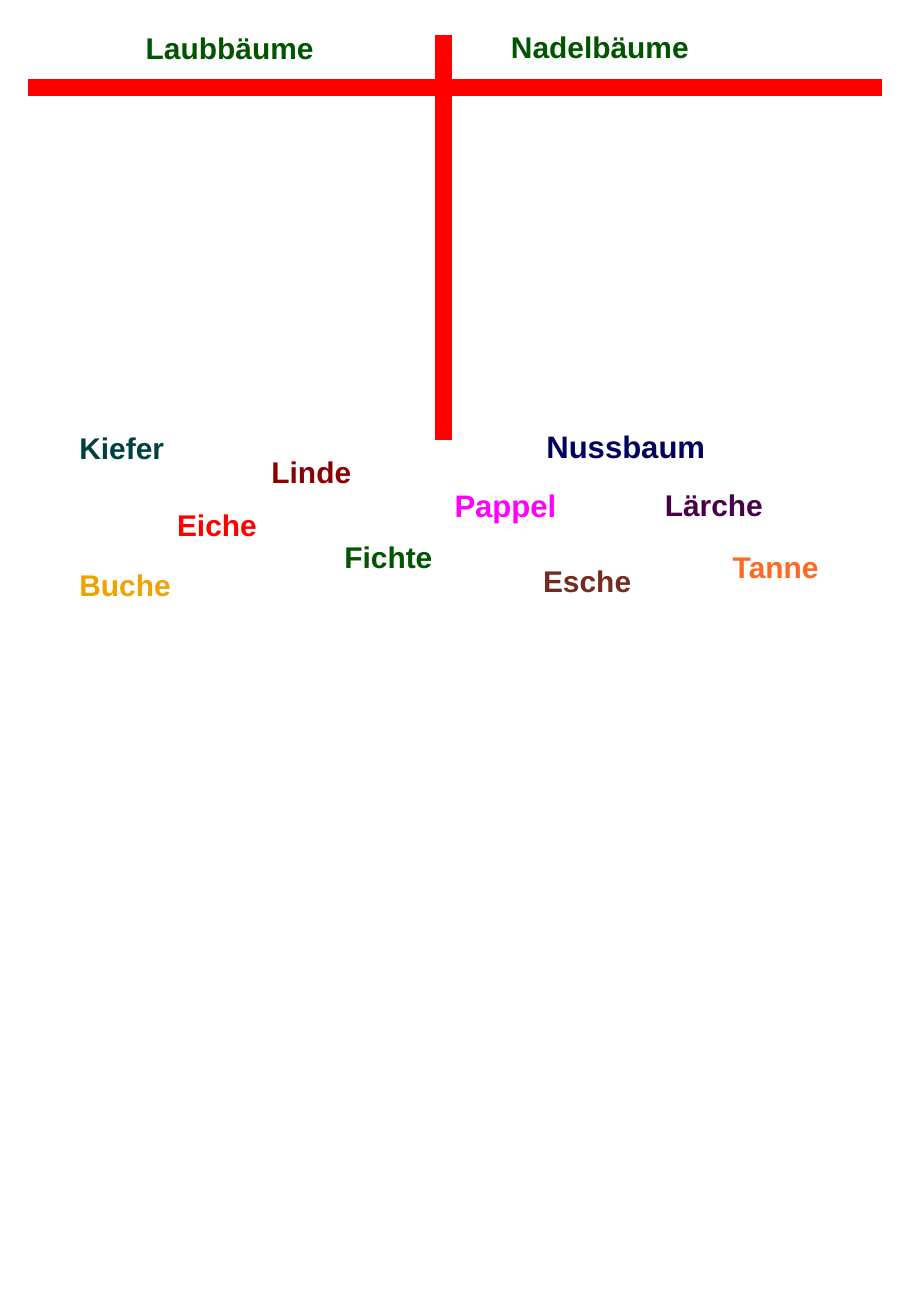
"""Build a German worksheet for sorting tree names into broadleaf and conifer columns."""
from dataclasses import dataclass

from lxml.etree import SubElement
from pptx import Presentation
from pptx.dml.color import RGBColor
from pptx.enum.shapes import MSO_CONNECTOR as Connector
from pptx.enum.text import MSO_ANCHOR as Anchor, MSO_AUTO_SIZE as AutoSize, PP_ALIGN as Align
from pptx.oxml.ns import qn
from pptx.util import Pt

PX = 9144


@dataclass(frozen=True)
class Theme:
    font: str = "Arial"
    normal: int = 26
    large: int = 27
    rule_width: int = 15
    red: str = "FF0000"
    green: str = "005500"
    teal: str = "004040"
    plum: str = "480048"
    orange: str = "FF6820"
    dark_red: str = "8B0000"
    gold: str = "EFA303"
    brown: str = "742C21"
    navy: str = "00005E"
    magenta: str = "FF00FF"


theme = Theme()


def write_word(shape, word, size, color):
    """Put one bold word at the top left of a shape."""
    frame = shape.text_frame
    frame.word_wrap = True
    frame.auto_size = AutoSize.SHAPE_TO_FIT_TEXT
    frame.vertical_anchor = Anchor.TOP
    paragraph = frame.paragraphs[0]
    paragraph.alignment = Align.LEFT
    paragraph.space_before = Pt(0)
    run = paragraph.add_run()
    run.text = word
    run.font.name = theme.font
    run.font.size = Pt(size)
    run.font.bold = True
    run.font.color.rgb = RGBColor.from_string(color)


presentation = Presentation()
presentation.slide_width = 1111 * PX
presentation.slide_height = 1589 * PX
comparison_layout = presentation.slide_layouts.get_by_name("Comparison")
slide = presentation.slides.add_slide(comparison_layout)

table_rules = [(34, 106, 1065, 106), (536, 42, 536, 531)]
for ends in table_rules:
    rule = slide.shapes.add_connector(Connector.STRAIGHT, *(end * PX for end in ends))
    rule.line.color.rgb = RGBColor.from_string(theme.red)
    rule.line.width = Pt(theme.rule_width)
    SubElement(rule.element.spPr, qn("a:effectLst"))

headings = {
    1: ("Laubbäume", 166, 31, 341),
    3: ("Nadelbäume", 607, 29, 360),
}
for placeholder in list(slide.placeholders):
    index = placeholder.placeholder_format.idx
    if index not in headings:
        placeholder.element.getparent().remove(placeholder.element)
        continue
    word, left, top, width = headings[index]
    placeholder.left, placeholder.top = left * PX, top * PX
    placeholder.width, placeholder.height = width * PX, 54 * PX
    write_word(placeholder, word, theme.normal, theme.green)

trees = [
    ("Kiefer", 86, 514, 199, theme.normal, theme.teal),
    ("Fichte", 406, 646, 208, theme.normal, theme.green),
    ("Lärche", 793, 583, 224, theme.normal, theme.plum),
    ("Tanne", 875, 657, 208, theme.normal, theme.orange),
    ("Linde", 318, 543, 194, theme.normal, theme.dark_red),
    ("Buche", 86, 679, 210, theme.normal, theme.gold),
    ("Eiche", 204, 607, 194, theme.normal, theme.red),
    ("Esche", 646, 674, 208, theme.normal, theme.brown),
    ("Nussbaum", 650, 511, 317, theme.large, theme.navy),
    ("Pappel", 539, 583, 222, theme.large, theme.magenta),
]
for tree, left, top, width, size, color in trees:
    height = 56 if size == theme.large else 54
    label = slide.shapes.add_textbox(left * PX, top * PX, width * PX, height * PX)
    write_word(label, tree, size, color)

presentation.save("out.pptx")
